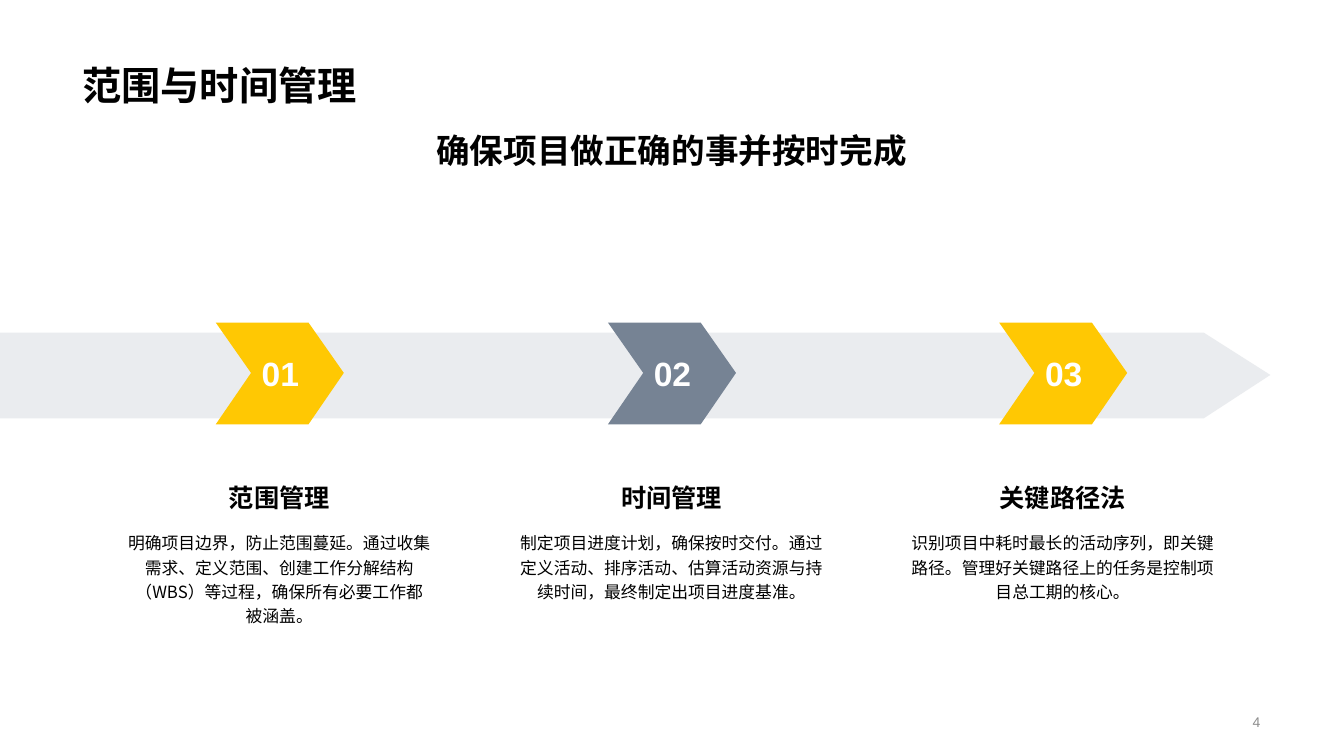
from dataclasses import dataclass

from lxml import etree
from pptx import Presentation
from pptx.dml.color import RGBColor
from pptx.enum.text import MSO_ANCHOR, PP_ALIGN
from pptx.oxml.ns import qn
from pptx.util import Emu, Pt

LEFT, CENTER, RIGHT = PP_ALIGN.LEFT, PP_ALIGN.CENTER, PP_ALIGN.RIGHT
TOP, MIDDLE, BOTTOM = MSO_ANCHOR.TOP, MSO_ANCHOR.MIDDLE, MSO_ANCHOR.BOTTOM

PX = 9144  # EMU per px, 100 px to the inch
LATIN_FONT = "Arial"
CHINESE_FONT = "Noto Sans CJK SC"
COLORS = {
    "text": "000000",
    "white": "FFFFFF",
    "yellow": "FFC803",
    "slate": "768394",
    "page": "8C8C8C",
}


@dataclass(frozen=True)
class Box:
    left: int
    top: int
    width: int
    height: int


@dataclass(frozen=True)
class TextStyle:
    size: int
    font: str = CHINESE_FONT
    color: str = "text"
    bold: bool = False
    align: PP_ALIGN = CENTER
    anchor: MSO_ANCHOR = TOP
    line_spacing: float = 1.0
    wrap: bool = True


@dataclass(frozen=True)
class Step:
    number: str
    heading: str
    description: str
    color: str


TITLE = TextStyle(28, bold=True, align=LEFT, anchor=BOTTOM)
SUBTITLE = TextStyle(24, bold=True)
NUMBER = TextStyle(24, LATIN_FONT, "white", bold=True, anchor=MIDDLE, wrap=False)
HEADING = TextStyle(18, bold=True, anchor=BOTTOM)
DESCRIPTION = TextStyle(12, line_spacing=1.2)
PAGE = TextStyle(10, LATIN_FONT, "page", align=RIGHT, anchor=MIDDLE)

STEPS = [
    Step("01", "范围管理",
         "明确项目边界，防止范围蔓延。通过收集需求、定义范围、创建工作分解结构（WBS）等过程，确保所有必要工作都被涵盖。",
         "yellow"),
    Step("02", "时间管理",
         "制定项目进度计划，确保按时交付。通过定义活动、排序活动、估算活动资源与持续时间，最终制定出项目进度基准。",
         "slate"),
    Step("03", "关键路径法",
         "识别项目中耗时最长的活动序列，即关键路径。管理好关键路径上的任务是控制项目总工期的核心。",
         "yellow"),
]
FIRST_STEP_LEFT = 117
LAST_STEP_LEFT = 894


def add_text(slide, text: str, box: Box, style: TextStyle) -> None:
    textbox = slide.shapes.add_textbox(
        box.left * PX, box.top * PX, box.width * PX, box.height * PX)
    frame = textbox.text_frame
    frame.text = text
    frame.word_wrap = style.wrap
    frame.vertical_anchor = style.anchor
    paragraph = frame.paragraphs[0]
    paragraph.alignment = style.align
    paragraph.line_spacing = style.line_spacing
    run = paragraph.runs[0]
    run.font.size = Pt(style.size)
    run.font.bold = style.bold
    run.font.color.rgb = RGBColor.from_string(COLORS[style.color])
    run.font.name = style.font
    # Chinese characters take the East Asian typeface
    properties = run._r.get_or_add_rPr()
    properties.set("lang", "zh-CN")
    etree.SubElement(properties, qn("a:ea")).set("typeface", style.font)


def add_outline(slide, points: list[tuple[int, int]], color: str,
                opacity: int = 100) -> None:
    builder = slide.shapes.build_freeform(*points[0], scale=PX)
    builder.add_line_segments(points[1:], close=True)
    outline = builder.convert_to_shape()
    outline.shadow.inherit = False
    outline.line.fill.background()
    outline.fill.solid()
    outline.fill.fore_color.rgb = RGBColor.from_string(COLORS[color])
    if opacity < 100:
        rgb = outline._element.spPr.find(f"{qn('a:solidFill')}/{qn('a:srgbClr')}")
        etree.SubElement(rgb, qn("a:alpha")).set("val", str(opacity * 1000))


def add_step(slide, step: Step, left: int) -> None:
    chevron = left + 97
    add_outline(slide, [
        (chevron + 92, 320), (chevron, 320), (chevron + 35, 370),
        (chevron, 421), (chevron + 92, 421), (chevron + 127, 370),
    ], step.color)
    add_text(slide, step.heading, Box(left, 444, 320, 69), HEADING)
    add_text(slide, step.description, Box(left, 520, 320, 151), DESCRIPTION)
    add_text(slide, step.number, Box(left + 132, 345, 58, 50), NUMBER)


def main() -> None:
    deck = Presentation()
    deck.slide_width = Emu(1333 * PX)
    deck.slide_height = Emu(750 * PX)
    slide = deck.slides.add_slide(deck.slide_layouts[6])

    # Page number, title and subtitle
    add_text(slide, "4", Box(860, 701, 400, 30), PAGE)
    add_text(slide, "范围与时间管理", Box(72, 14, 1188, 98), TITLE)
    add_text(slide, "确保项目做正确的事并按时完成", Box(72, 124, 1188, 85), SUBTITLE)

    # Pale arrow behind the steps
    add_outline(slide, [(1194, 330), (0, 330), (0, 415), (1194, 415), (1260, 372)],
                "slate", opacity=15)

    # Steps, evenly spaced
    pitch = (LAST_STEP_LEFT - FIRST_STEP_LEFT) / (len(STEPS) - 1)
    for index, step in enumerate(STEPS):
        add_step(slide, step, round(FIRST_STEP_LEFT + index * pitch))

    deck.save("out.pptx")


if __name__ == "__main__":
    main()
